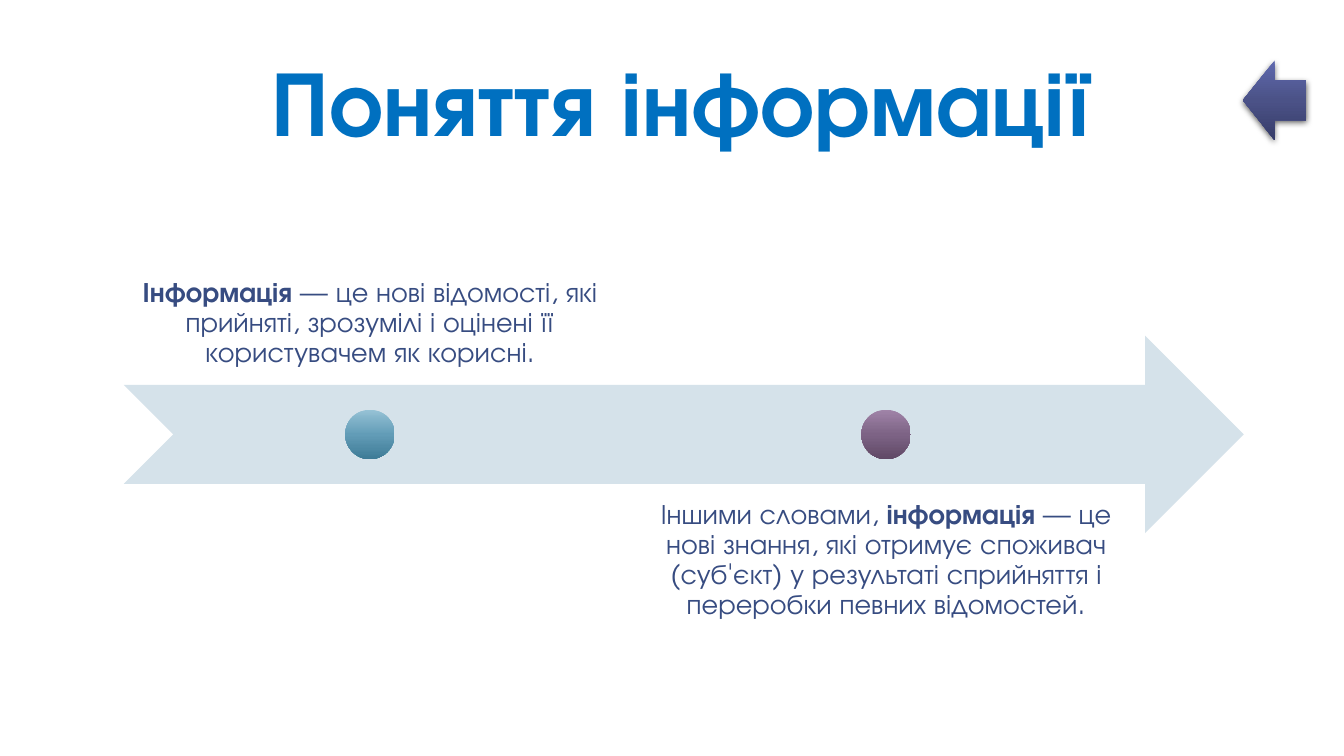
from dataclasses import dataclass

import pptx
import pptx.dml.color
import pptx.enum.shapes
import pptx.enum.text
import pptx.oxml
import pptx.oxml.ns
import pptx.util

Pt = pptx.util.Pt
SHAPES = pptx.enum.shapes.MSO_SHAPE
ANCHOR = pptx.enum.text.MSO_ANCHOR
FONT = "TeX Gyre Adventor"
COLORS = {
    "title": "0070C0",
    "caption": "374C81",
    "timeline": "D5E2EA",
    "shadow": "000000",
}
GRADIENTS = {
    "blue": ("96C2D5", "629CB7", "3E7B96"),
    "purple": ("A084A8", "7D6385", "604966"),
    "indigo": ("606AAF", "4B5287", "363C69"),
}


@dataclass(frozen=True)
class Box:
    left: float
    top: float
    width: float
    height: float

    def lengths(self) -> tuple:
        return Pt(self.left), Pt(self.top), Pt(self.width), Pt(self.height)


@dataclass(frozen=True)
class Milestone:
    left: float
    above: bool
    gradient: str
    runs: tuple[tuple[str, bool], ...]


TIMELINE = Box(88.56, 239.76, 799.92, 141.12)
CAPTION_WIDTH = 351.4
DOT_SIZE = 35.28
MILESTONES = (
    Milestone(88.56, True, "blue", (
        ("Інформація", True),
        (" — це нові відомості, які прийняті, зрозумілі і оцінені її "
         "користувачем як корисні.", False),
    )),
    Milestone(457.2, False, "purple", (
        ("Іншими словами, ", False),
        ("інформація", True),
        (" — це нові знання, які отримує споживач (суб'єкт) у результаті "
         "сприйняття і переробки певних відомостей.", False),
    )),
)


def write_text(frame, runs, *, size: float, color: str, anchor,
               line_spacing: float, inset_x: float, inset_y: float) -> None:
    """Fill a text frame with one centred paragraph of (text, bold) runs."""
    frame.word_wrap = True
    frame.auto_size = pptx.enum.text.MSO_AUTO_SIZE.NONE
    frame.vertical_anchor = anchor
    frame.margin_left = frame.margin_right = Pt(inset_x)
    frame.margin_top = frame.margin_bottom = Pt(inset_y)
    paragraph = frame.paragraphs[0]
    paragraph.alignment = pptx.enum.text.PP_ALIGN.CENTER
    paragraph.line_spacing = line_spacing
    for text, bold in runs:
        run = paragraph.add_run()
        run.text = text
        run.font.name = FONT
        run.font.size = Pt(size)
        run.font.bold = bold
        run.font.color.rgb = pptx.dml.color.RGBColor.from_string(COLORS[color])


def add_plain_shape(slide, preset, box: Box):
    shape = slide.shapes.add_shape(preset, *box.lengths())
    shape.shadow.inherit = False
    shape.line.fill.background()
    return shape


def fill_gradient(shape, name: str) -> None:
    """Apply a three-stop gradient running from top to bottom."""
    shape.fill.gradient()
    shape.fill.gradient_angle = 270
    qn = pptx.oxml.ns.qn
    stops = shape.fill.gradient_stops
    stop_list = shape.element.spPr.find(qn("a:gradFill")).find(qn("a:gsLst"))
    stop_list.insert(1, pptx.oxml.parse_xml(
        f'<a:gs {pptx.oxml.ns.nsdecls("a")} pos="50000"><a:srgbClr val="000000"/></a:gs>'))
    for stop, position, color in zip(shape.fill.gradient_stops, (0, 0.5, 1), GRADIENTS[name]):
        stop.position = position
        stop.color.rgb = pptx.dml.color.RGBColor.from_string(color)


def add_soft_shadow(shape) -> None:
    effects = shape.element.spPr.find(pptx.oxml.ns.qn("a:effectLst"))
    effects.append(pptx.oxml.parse_xml(
        f'<a:outerShdw {pptx.oxml.ns.nsdecls("a")} blurRad="{Pt(4.5)}" '
        f'dist="{Pt(1.5)}" dir="5400000" rotWithShape="0">'
        f'<a:srgbClr val="{COLORS["shadow"]}"><a:alpha val="63000"/></a:srgbClr>'
        '</a:outerShdw>'))


def add_milestone(slide, milestone: Milestone) -> None:
    shift = 0.75 * TIMELINE.height * (-1 if milestone.above else 1)
    caption = slide.shapes.add_textbox(*Box(
        milestone.left, TIMELINE.top + shift, CAPTION_WIDTH, TIMELINE.height).lengths())
    write_text(caption.text_frame, milestone.runs, size=20, color="caption",
               anchor=ANCHOR.BOTTOM if milestone.above else ANCHOR.TOP,
               line_spacing=0.9, inset_x=11.5, inset_y=11.5)
    dot = add_plain_shape(slide, SHAPES.OVAL, Box(
        milestone.left + (CAPTION_WIDTH - DOT_SIZE) / 2,
        TIMELINE.top + (TIMELINE.height - DOT_SIZE) / 2,
        DOT_SIZE, DOT_SIZE))
    fill_gradient(dot, milestone.gradient)


def main() -> None:
    deck = pptx.Presentation()
    deck.slide_width, deck.slide_height = Pt(960), Pt(540)
    slide = deck.slides.add_slide(deck.slide_layouts[5])

    title = slide.shapes.title
    title.left, title.top, title.width, title.height = Box(87.84, 5.76, 800, 110.2).lengths()
    write_text(title.text_frame, (("Поняття інформації", True),), size=66, color="title",
               anchor=ANCHOR.BOTTOM, line_spacing=0.85, inset_x=9.4, inset_y=5)

    timeline = add_plain_shape(slide, SHAPES.NOTCHED_RIGHT_ARROW, TIMELINE)
    timeline.fill.solid()
    timeline.fill.fore_color.rgb = pptx.dml.color.RGBColor.from_string(COLORS["timeline"])
    for milestone in MILESTONES:
        add_milestone(slide, milestone)

    back_arrow = add_plain_shape(slide, SHAPES.LEFT_ARROW, Box(887.8, 43.2, 45.4, 56.9))
    fill_gradient(back_arrow, "indigo")
    add_soft_shadow(back_arrow)

    deck.save("out.pptx")


if __name__ == "__main__":
    main()
